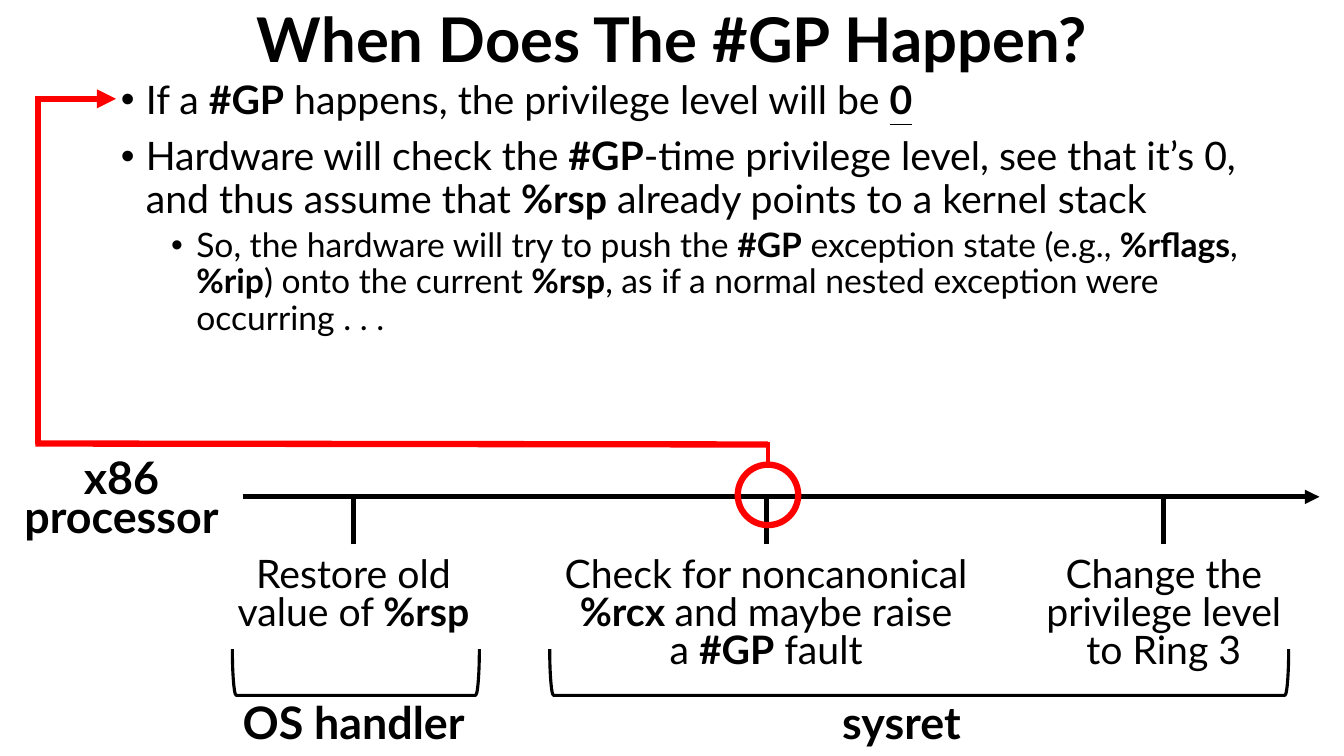
"""Build the slide on when a #GP fault happens, with its processor timeline."""
from pptx import Presentation
from pptx.dml.color import RGBColor
from pptx.enum import shapes, text
from pptx.oxml.ns import qn
from pptx.util import Pt
from lxml import etree

THEME = {
    "font": "Lato",
    "ink": RGBColor(0, 0, 0),
    "alert": RGBColor(255, 0, 0),
    "title": 44, "label": 32, "body": 28, "sub": 24,
}

TITLE = "When Does The #GP Happen?"
# Asterisks enclose bold words; an underscore opens an underlined one.
POINTS = [
    (0, "If a *#GP* happens, the privilege level will be *_0*"),
    (0, "Hardware will check the *#GP*-time privilege level, see that it’s 0, "
        "and thus assume that *%rsp* already points to a kernel stack"),
    (1, "So, the hardware will try to push the *#GP* exception state (e.g., "
        "*%rflags*, *%rip*) onto the current *%rsp*, as if a normal nested "
        "exception were occurring . . ."),
]
ACTOR = ["*x86*", "*processor*"]
STEPS = [
    (252.5, 190, ["Restore old", "value of *%rsp*"]),
    (547.2, 316.8, ["Check for noncanonical", "*%rcx *and maybe raise",
                    "a *#GP* fault"]),
    (831.3, 190, ["Change the", "privilege level", "to Ring 3"]),
]
PHASES = [
    ("*OS handler*", 252.7, 254.2, 176.4),
    ("*sysret*", 644, 656.6, 527.8),
]
AXIS, TICK_END = 354.9, 388.8
ALERT_LINES = [
    ((548.6, 317.5), (25.2, 316.8), 4.5, False),
    ((25.2, 70.6), (82.8, 70.6), 4.5, True),
    ((27.4, 317.5), (27.4, 69.8), 4.5, False),
    ((548.6, 331.2), (548.6, 315.4), 3.5, False),
]

deck = Presentation()
deck.slide_width, deck.slide_height = Pt(960), Pt(540)
slide = deck.slides.add_slide(deck.slide_layouts[6])


def fill(para, words, size):
    para.font.name, para.font.size = THEME["font"], Pt(size)
    para.font.color.rgb = THEME["ink"]
    for i, part in enumerate(words.split("*")):
        if part:
            run = para.add_run()
            run.text = part.lstrip("_")
            run.font.bold = i % 2 == 1
            if part.startswith("_"):
                run.font.underline = True


def box(left, top, width, height):
    frame = slide.shapes.add_textbox(
        Pt(left), Pt(top), Pt(width), Pt(height)).text_frame
    frame.word_wrap = True
    return frame


def stack(lines, mid, top, width, size, pitch):
    for i, words in enumerate(lines):
        para = box(mid - width / 2, top + i * pitch, width,
                   size * 1.2 + 7.2).paragraphs[0]
        para.alignment = text.PP_ALIGN.CENTER
        fill(para, words, size)


def line(start, end, color, width, arrow=False):
    link = slide.shapes.add_connector(
        shapes.MSO_CONNECTOR.STRAIGHT, *map(Pt, start + end))
    link.line.color.rgb, link.line.width = color, Pt(width)
    if arrow:
        etree.SubElement(link.line._get_or_add_ln(), qn("a:tailEnd"),
                         type="triangle")
    etree.SubElement(link._element.spPr, qn("a:effectLst"))


def outline(kind, left, top, width, height, color, weight):
    shape = slide.shapes.add_shape(kind, Pt(left), Pt(top), Pt(width), Pt(height))
    shape.shadow.inherit = False
    shape.fill.background()
    shape.line.color.rgb, shape.line.width = color, Pt(weight)
    return shape


def bullet(para, level):
    para.level, para.line_spacing = level, 0.9
    para.space_before = Pt(5 if level else 10)
    props = para._p.get_or_add_pPr()
    props.set("marL", str(Pt(54 if level else 18)))
    props.set("indent", str(Pt(-18)))
    face = etree.Element(qn("a:buFont"), typeface="Arial")
    mark = etree.Element(qn("a:buChar"), char="•")
    spot = props.find(qn("a:spcBef"))
    spot.addnext(face)
    face.addnext(mark)


def main():
    head = box(66.2, 0, 828, 60.5)
    head.vertical_anchor = text.MSO_ANCHOR.MIDDLE
    para = head.paragraphs[0]
    para.alignment, para.line_spacing = text.PP_ALIGN.CENTER, 0.9
    fill(para, f"*{TITLE}*", THEME["title"])

    stack(ACTOR, 86.8, 317.5, 176.4, THEME["label"], 28.1)
    line((173.5, AXIS), (942.5, AXIS), THEME["ink"], 3.5, True)
    for mid, width, lines in STEPS:
        line((mid, TICK_END), (mid, AXIS), THEME["ink"], 3.5)
        stack(lines, mid, TICK_END, width, THEME["body"], 27.3)
    for name, mid, center, span in PHASES:
        brace = outline(shapes.MSO_SHAPE.LEFT_BRACKET, center - 16.5,
                        480.2 - span / 2, 33, span, THEME["ink"], 2.25)
        brace.rotation = 270
        stack([name], mid, 492.5, 186, THEME["label"], 0)

    outline(shapes.MSO_SHAPE.OVAL, 527, 331.9, 43.2, 43.2, THEME["alert"], 4.5)
    for start, end, width, arrow in ALERT_LINES:
        line(start, end, THEME["alert"], width, arrow)

    body = box(79.2, 54, 838.1, 268.6)
    for i, (level, words) in enumerate(POINTS):
        para = body.add_paragraph() if i else body.paragraphs[0]
        bullet(para, level)
        fill(para, words, THEME["sub" if level else "body"])
    deck.save("out.pptx")


if __name__ == "__main__":
    main()
